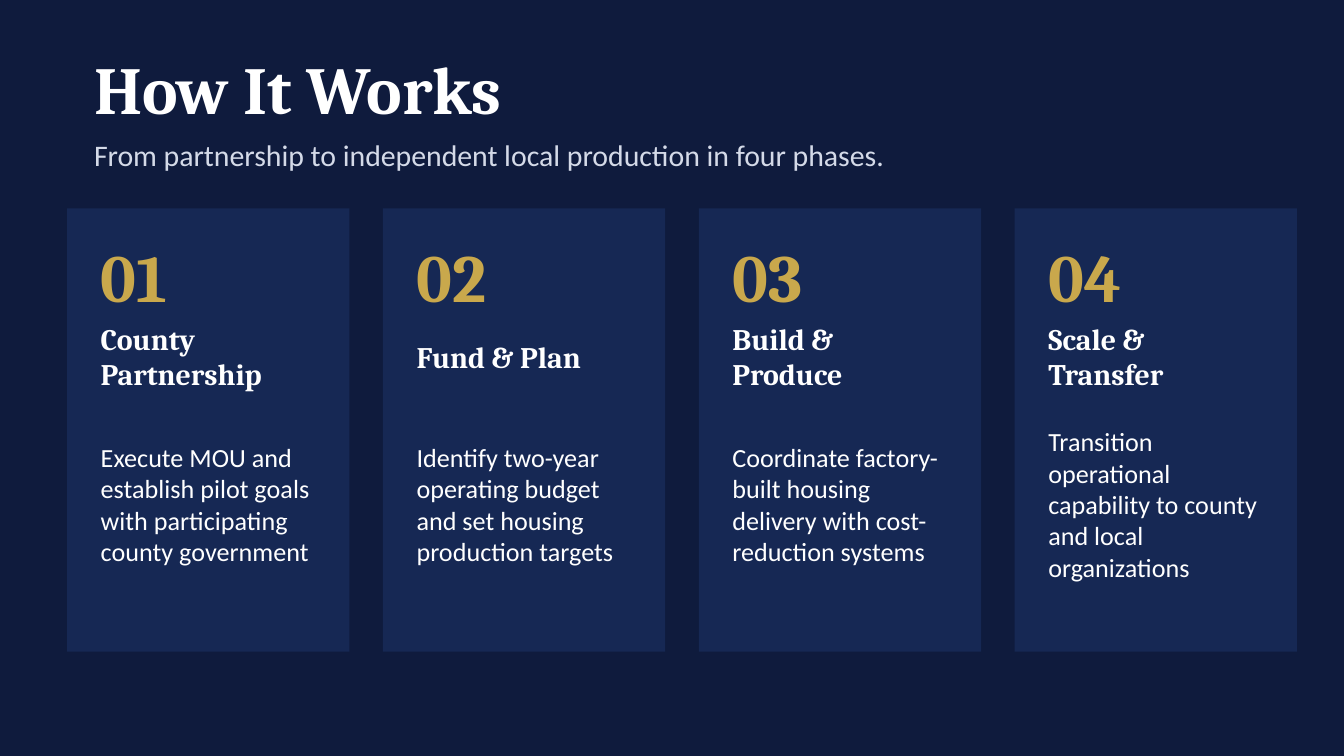
from pptx import Presentation
from pptx.dml.color import RGBColor
from pptx.enum.shapes import MSO_SHAPE
from pptx.enum.text import MSO_ANCHOR
from pptx.util import Pt

RECTANGLE = MSO_SHAPE.RECTANGLE
MIDDLE = MSO_ANCHOR.MIDDLE

NAVY = RGBColor(0x0F, 0x1B, 0x3D)
CARD_BLUE = RGBColor(0x16, 0x28, 0x54)
GOLD = RGBColor(0xC9, 0xA8, 0x4C)
MIST = RGBColor(0xD4, 0xDA, 0xE8)
WHITE = RGBColor(0xFF, 0xFF, 0xFF)

TITLE = {"name": "Cambria", "size": Pt(36), "bold": True, "color": WHITE}
SUBTITLE = {"name": "Calibri", "size": Pt(16), "bold": False, "color": MIST}
NUMBER = {**TITLE, "color": GOLD}
HEADING = {**TITLE, "size": Pt(16)}
BODY = {**SUBTITLE, "size": Pt(14), "color": WHITE}

PHASES = [
    ("County Partnership",
     "Execute MOU and establish pilot goals with participating county government"),
    ("Fund & Plan",
     "Identify two-year operating budget and set housing production targets"),
    ("Build & Produce",
     "Coordinate factory-built housing delivery with cost-reduction systems"),
    ("Scale & Transfer",
     "Transition operational capability to county and local organizations"),
]

CARD_LEFT, CARD_TOP = 36, 111.6
CARD_WIDTH, CARD_HEIGHT = 151.2, 237.6
CARD_GAP, CARD_PADDING = 18, 18
TEXT_WIDTH = 115.2

prs = Presentation()
prs.slide_width, prs.slide_height = Pt(720), Pt(405)
slide = prs.slides.add_slide(prs.slide_layouts[6])
slide.background.fill.solid()
slide.background.fill.fore_color.rgb = NAVY


def add_text(text, left, top, width, height, style):
    box = slide.shapes.add_textbox(Pt(left), Pt(top), Pt(width), Pt(height))
    frame = box.text_frame
    frame.word_wrap = True
    frame.vertical_anchor = MIDDLE
    for side in ("left", "top", "right", "bottom"):
        setattr(frame, f"margin_{side}", 0)
    run = frame.paragraphs[0].add_run()
    run.text = text
    for attribute, value in style.items():
        if attribute == "color":
            run.font.color.rgb = value
        else:
            setattr(run.font, attribute, value)


add_text("How It Works", 50.4, 25.2, 648, 43.2, TITLE)
add_text("From partnership to independent local production in four phases.",
         50.4, 68.4, 612, 28.8, SUBTITLE)

for index, (heading, description) in enumerate(PHASES):
    left = CARD_LEFT + index * (CARD_WIDTH + CARD_GAP)
    card = slide.shapes.add_shape(
        RECTANGLE, Pt(left), Pt(CARD_TOP), Pt(CARD_WIDTH), Pt(CARD_HEIGHT))
    card.shadow.inherit = False
    card.fill.solid()
    card.fill.fore_color.rgb = CARD_BLUE
    card.line.fill.background()

    text_left = left + CARD_PADDING
    add_text(f"{index + 1:02d}", text_left, 126, 72, 43.2, NUMBER)
    add_text(heading, text_left, 172.8, TEXT_WIDTH, 36, HEADING)
    add_text(description, text_left, 212.4, TEXT_WIDTH, 115.2, BODY)

prs.save("out.pptx")
